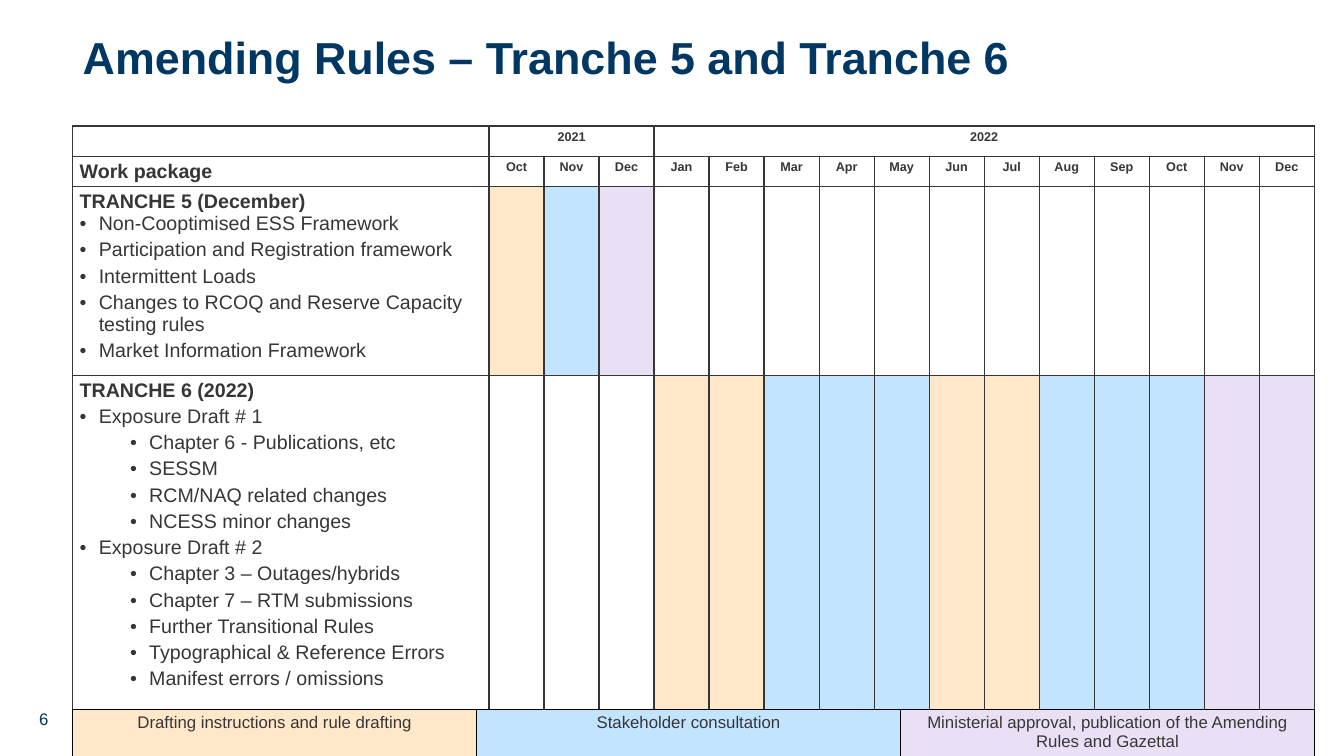
from lxml.etree import SubElement
from pptx import Presentation
from pptx.dml.color import RGBColor
from pptx.enum.text import MSO_ANCHOR, PP_ALIGN
from pptx.oxml.ns import qn
from pptx.util import Inches, Pt

NAVY = RGBColor(0x00, 0x37, 0x63)
DARK = RGBColor(0x37, 0x36, 0x36)
BLACK = RGBColor(0x00, 0x00, 0x00)
WHITE = RGBColor(0xFF, 0xFF, 0xFF)
DRAFTING = RGBColor(0xFF, 0xE8, 0xC9)
CONSULTATION = RGBColor(0xC2, 0xE4, 0xFF)
APPROVAL = RGBColor(0xE9, 0xE0, 0xF5)

FONT = "Arial"
LEFT = 0.72
MONTHS = "Oct Nov Dec Jan Feb Mar Apr May Jun Jul Aug Sep Oct Nov Dec".split()

# Each work package is a list of (indent level, text); level 0 is the heading.
TRANCHE_5 = [
    (0, "TRANCHE 5 (December)"),
    (1, "Non-Cooptimised ESS Framework"),
    (1, "Participation and Registration framework"),
    (1, "Intermittent Loads"),
    (1, "Changes to RCOQ and Reserve Capacity testing rules"),
    (1, "Market Information Framework"),
]
TRANCHE_6 = [
    (0, "TRANCHE 6 (2022)"),
    (1, "Exposure Draft # 1"),
    (2, "Chapter 6 - Publications, etc"),
    (2, "SESSM"),
    (2, "RCM/NAQ related changes"),
    (2, "NCESS minor changes"),
    (1, "Exposure Draft # 2"),
    (2, "Chapter 3 – Outages/hybrids"),
    (2, "Chapter 7 – RTM submissions"),
    (2, "Further Transitional Rules"),
    (2, "Typographical & Reference Errors"),
    (2, "Manifest errors / omissions"),
]
TRANCHE_5_PHASES = [DRAFTING, CONSULTATION, APPROVAL] + [WHITE] * 12
TRANCHE_6_PHASES = (
    [WHITE] * 3 + [DRAFTING] * 2 + [CONSULTATION] * 3
    + [DRAFTING] * 2 + [CONSULTATION] * 3 + [APPROVAL] * 2
)
LEGEND = [
    ("Drafting instructions and rule drafting", DRAFTING),
    ("Stakeholder consultation", CONSULTATION),
    ("Ministerial approval, publication of the Amending Rules and Gazettal", APPROVAL),
]


def set_font(paragraph, size, color=DARK, bold=False):
    font = paragraph.font
    font.name = FONT
    font.size = Pt(size)
    font.bold = bold
    font.color.rgb = color


def add_bullet(paragraph, level):
    properties = paragraph._p.get_or_add_pPr()
    properties.set("marL", str(Inches(0.19 + 0.5 * (level - 1))))
    properties.set("indent", str(-Inches(0.19)))
    SubElement(properties, qn("a:buFont"), typeface=FONT)
    SubElement(properties, qn("a:buChar"), char="•")


def set_borders(cell, color):
    properties = cell._tc.get_or_add_tcPr()
    for side in ("lnL", "lnR", "lnT", "lnB"):
        line = SubElement(properties, qn(f"a:{side}"), w=str(Pt(1)))
        fill = SubElement(line, qn("a:solidFill"))
        SubElement(fill, qn("a:srgbClr"), val=str(color))


def add_table(slide, top, widths, heights, border):
    """Add a plain white table with the same border round every cell."""
    table = slide.shapes.add_table(
        len(heights), len(widths), Inches(LEFT), Inches(top),
        Inches(sum(widths)), Inches(sum(heights)),
    ).table
    table.first_row = False
    table.horz_banding = False
    for column, width in zip(table.columns, widths):
        column.width = Inches(width)
    for row, height in zip(table.rows, heights):
        row.height = Inches(height)
    for cell in table.iter_cells():
        set_borders(cell, border)
        fill_cell(cell, WHITE)
        cell.margin_left = cell.margin_right = Inches(0.07)
        cell.margin_top = cell.margin_bottom = 0
    return table


def fill_cell(cell, color):
    cell.fill.solid()
    cell.fill.fore_color.rgb = color


def write_cell(cell, text, size, bold=False, alignment=PP_ALIGN.CENTER):
    cell.margin_top = Inches(0.04)
    cell.margin_bottom = Inches(0.03)
    cell.text = text
    paragraph = cell.text_frame.paragraphs[0]
    paragraph.alignment = alignment
    set_font(paragraph, size, bold=bold)


def write_work_package(cell, items, heading_gap):
    (_, heading), *bullets = items
    write_cell(cell, heading, 14, True, PP_ALIGN.LEFT)
    cell.text_frame.paragraphs[0].space_after = Pt(heading_gap)
    for level, text in bullets:
        paragraph = cell.text_frame.add_paragraph()
        paragraph.text = text
        paragraph.level = level - 1
        paragraph.space_after = Pt(3)
        add_bullet(paragraph, level)
        set_font(paragraph, 14)


def add_title(slide):
    title = slide.shapes.title
    title.left, title.top = Inches(LEFT), Inches(0.3)
    title.width, title.height = Inches(11.49), Inches(0.64)
    title.text = "Amending Rules – Tranche 5 and Tranche 6"
    title.text_frame.vertical_anchor = MSO_ANCHOR.TOP
    paragraph = title.text_frame.paragraphs[0]
    paragraph.alignment = PP_ALIGN.LEFT
    paragraph.line_spacing = 0.9
    set_font(paragraph, 32, NAVY, True)


def add_slide_number(slide):
    box = slide.shapes.add_textbox(Inches(0.29), Inches(6.93), Inches(3), Inches(0.4))
    frame = box.text_frame
    frame.word_wrap = True
    frame.vertical_anchor = MSO_ANCHOR.MIDDLE
    frame.text = "6"
    set_font(frame.paragraphs[0], 12, NAVY)


def add_schedule(slide):
    widths = [4.13] + [0.546] * len(MONTHS)
    table = add_table(slide, 1.25, widths, [0.3, 0.29, 1.78, 3.15], DARK)
    set_font(table.cell(0, 0).text_frame.paragraphs[0], 9)
    for year, first, last in (("2021", 1, 3), ("2022", 4, 15)):
        table.cell(0, first).merge(table.cell(0, last))
        write_cell(table.cell(0, first), year, 9, True)
    write_cell(table.cell(1, 0), "Work package", 14, True, PP_ALIGN.LEFT)
    for column, month in enumerate(MONTHS, 1):
        write_cell(table.cell(1, column), month, 9, True)
    write_work_package(table.cell(2, 0), TRANCHE_5, heading_gap=0)
    write_work_package(table.cell(3, 0), TRANCHE_6, heading_gap=3)
    for row, phases in ((2, TRANCHE_5_PHASES), (3, TRANCHE_6_PHASES)):
        for column, color in enumerate(phases, 1):
            fill_cell(table.cell(row, column), color)


def add_legend(slide):
    table = add_table(slide, 7.04, [4.01, 4.2, 4.11], [0.45], BLACK)
    for column, (text, color) in enumerate(LEGEND):
        cell = table.cell(0, column)
        write_cell(cell, text, 12)
        fill_cell(cell, color)


def main():
    presentation = Presentation()
    presentation.slide_width = Inches(13.33)
    presentation.slide_height = Inches(7.5)
    slide = presentation.slides.add_slide(presentation.slide_layouts[5])
    add_title(slide)
    add_slide_number(slide)
    add_schedule(slide)
    add_legend(slide)
    presentation.save("out.pptx")


if __name__ == "__main__":
    main()
